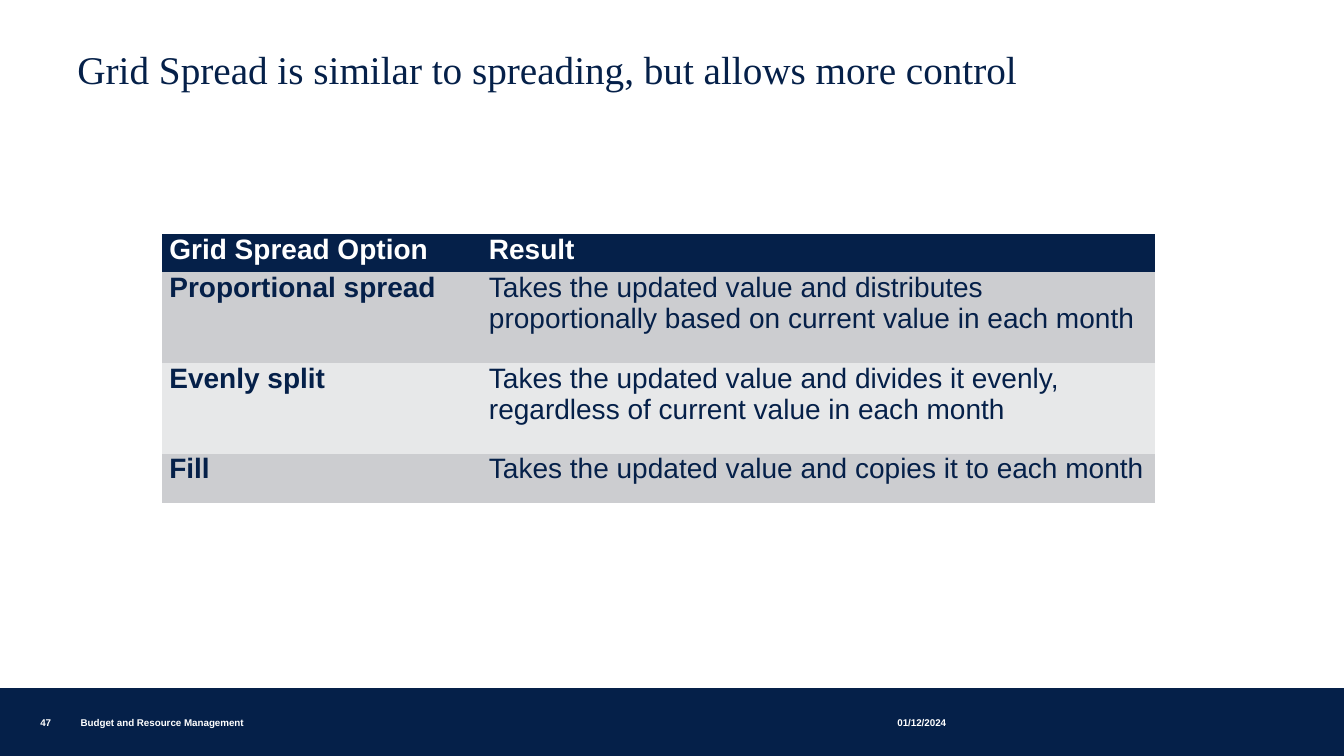
"""Build the Grid Spread options slide."""
from pptx import Presentation
from pptx.dml.color import RGBColor
from pptx.enum.shapes import MSO_SHAPE as Shape
from pptx.enum.text import MSO_ANCHOR as Anchor, PP_ALIGN as Align
from pptx.oxml.ns import qn
from pptx.util import Inches, Pt

NAVY, WHITE = "052049", "FFFFFF"
BANDS = ["CCCDD0", "E7E8E9"]
NO_GRID_STYLE = "{2D5ABB26-0587-4C30-8999-92F81FD0307C}"
OPTIONS = [
    ("Grid Spread Option", "Result"),
    ("Proportional spread", "Takes the updated value and distributes "
     "proportionally based on current value in each month"),
    ("Evenly split", "Takes the updated value and divides it evenly, "
     "regardless of current value in each month"),
    ("Fill", "Takes the updated value and copies it to each month"),
]
FOOTERS = [
    ("47", 0.4, 7.06, 0.36, 0.17),
    ("Budget and Resource Management", 0.8, 7.08, 6.29, 0.15),
    ("01/12/2024", 8.9, 7.06, 1.35, 0.17),
]


def color(value):
    return RGBColor.from_string(value)


def write(frame, text, size=20, font="Arial", ink=NAVY, bold=False, spacing=None):
    para = frame.paragraphs[0]
    para.alignment = Align.LEFT
    para.line_spacing = spacing
    span = para.add_run()
    span.text = text
    span.font.size = Pt(size)
    span.font.name = font
    span.font.bold = bold
    span.font.color.rgb = color(ink)


class SlideBuilder:
    def __init__(self, page):
        self.page = page

    def bar(self, left, top, width, height):
        box = self.page.shapes.add_shape(
            Shape.RECTANGLE, *map(Inches, (left, top, width, height)))
        box.shadow.inherit = False
        box.fill.solid()
        box.fill.fore_color.rgb = color(NAVY)
        box.line.color.rgb = color(NAVY)
        box.line.width = Pt(1.5)

    def label(self, text, left, top, width, height, inset=(0, 0), **style):
        box = self.page.shapes.add_textbox(*map(Inches, (left, top, width, height)))
        frame = box.text_frame
        frame.word_wrap = True
        frame.vertical_anchor = Anchor.BOTTOM
        frame.margin_left = frame.margin_right = Inches(inset[0])
        frame.margin_top = frame.margin_bottom = Inches(inset[1])
        write(frame, text, **style)

    def table(self, rows, left, top, widths, heights):
        holder = self.page.shapes.add_table(
            len(rows), len(widths), Inches(left), Inches(top),
            Inches(sum(widths)), Inches(sum(heights)))
        holder.element.find(".//" + qn("a:tableStyleId")).text = NO_GRID_STYLE
        grid = holder.table
        for column, width in zip(grid.columns, widths):
            column.width = Inches(width)
        for r, (texts, height) in enumerate(zip(rows, heights)):
            grid.rows[r].height = Inches(height)
            header = r == 0
            for c, text in enumerate(texts):
                cell = grid.cell(r, c)
                cell.margin_left = cell.margin_right = Inches(0.07)
                cell.margin_top = cell.margin_bottom = 0
                cell.fill.solid()
                cell.fill.fore_color.rgb = color(NAVY if header else BANDS[(r - 1) % 2])
                write(cell.text_frame, text, ink=WHITE if header else NAVY,
                      bold=header or c == 0)


def main():
    deck = Presentation()
    deck.slide_width, deck.slide_height = Inches(13.33), Inches(7.5)
    builder = SlideBuilder(deck.slides.add_slide(deck.slide_layouts[6]))
    builder.bar(0, 6.84, 13.33, 0.66)
    builder.label("Grid Spread is similar to spreading, but allows more control",
                  0.67, 0.47, 11.8, 0.5, inset=(0.1, 0.05),
                  size=28, font="Times New Roman", spacing=0.85)
    builder.table(OPTIONS, 1.61, 2.32, [3.17, 6.68], [0.38, 0.9, 0.9, 0.49])
    for footer in FOOTERS:
        builder.label(*footer, size=7, ink=WHITE, bold=True)
    deck.save("out.pptx")


if __name__ == "__main__":
    main()
